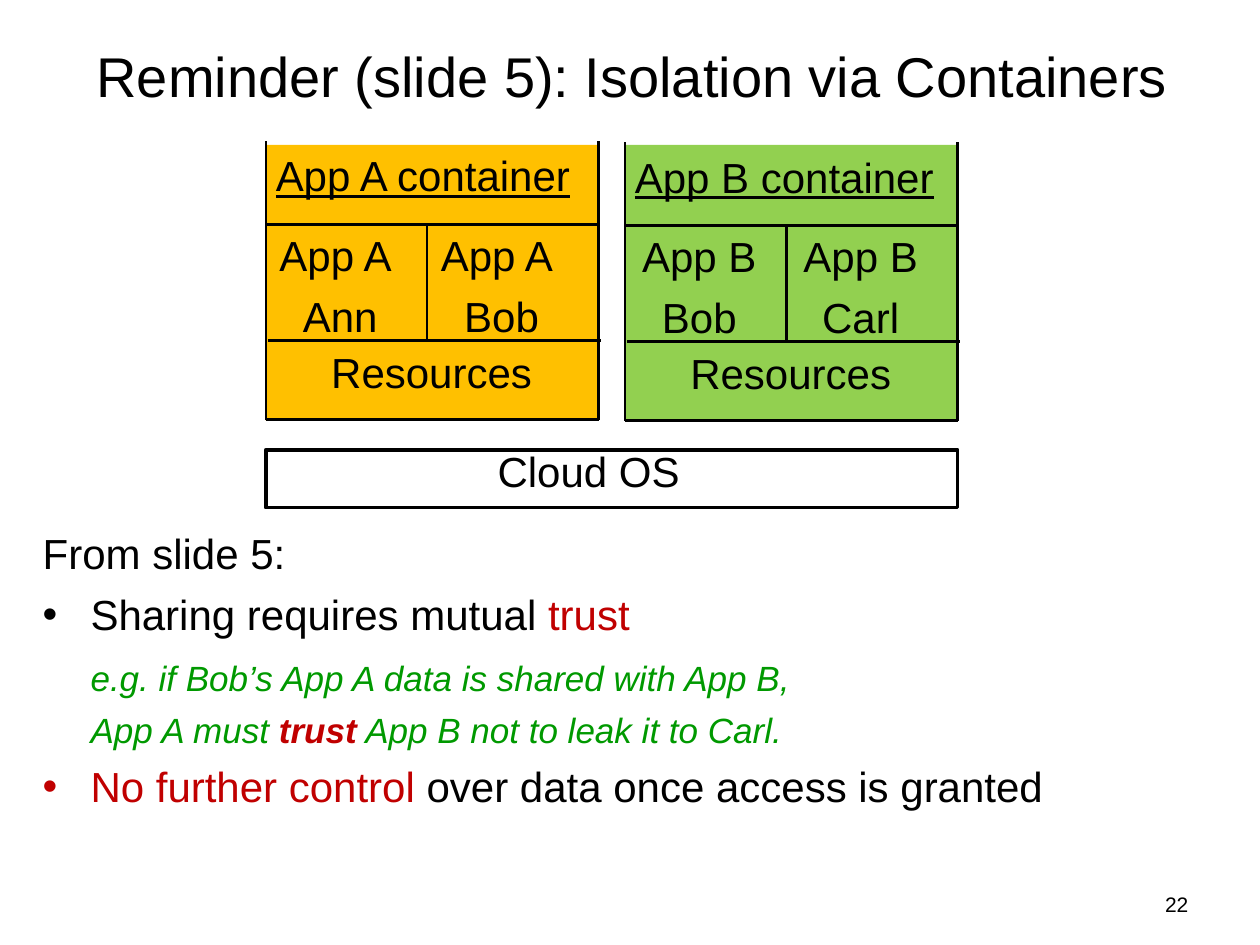
from lxml.etree import SubElement
from pptx import Presentation
from pptx.dml.color import RGBColor
from pptx.enum.shapes import MSO_CONNECTOR, MSO_SHAPE
from pptx.enum.text import MSO_ANCHOR, PP_ALIGN
from pptx.oxml.ns import qn
from pptx.util import Inches, Pt

HUES = {"ink": "000000", "amber": "FFC000", "lime": "92D050",
        "red": "C00000", "green": "009900"}
FONT = "Arial"
TITLE = "Reminder (slide 5): Isolation via Containers"
APPS = [
    ("App A", "amber", ["Ann", "Bob"], 2.11, 1.14),
    ("App B", "lime", ["Bob", "Carl"], 4.96, 1.15),
]
NOTES = [
    (24, 0, False, [("From slide 5:", "ink", "")]),
    (24, 6, True, [("Sharing requires mutual ", "ink", ""), ("trust", "red", "")]),
    (20, 10, False, [("e.g. if Bob’s App A data is shared with App B,", "green", "i")]),
    (20, 5.5, False, [("App A must ", "green", "i"), ("trust", "red", "bi"),
                      (" App B not to leak it to Carl.", "green", "i")]),
    (24, 6, True, [("No further control ", "red", ""),
                   ("over data once access is granted", "ink", "")]),
]
WIDE, HALF = 2.64, 1.28
EDGES = [
    (0, -0.02, 0, 2.19),
    (WIDE, -0.02, WIDE, 2.19),
    (0, 2.19, WIDE, 2.19),
    (0.02, 1.56, WIDE + 0.02, 1.56),
    (HALF, 0.64, HALF, 1.56),
    (0, 0.64, WIDE, 0.64),
]

deck = Presentation()
deck.slide_width, deck.slide_height = Inches(10), Inches(7.5)
slide = deck.slides.add_slide(deck.slide_layouts[6])
shapes = slide.shapes


def hue(name):
    return RGBColor.from_string(HUES[name])


def style(run, size, color="ink", marks=""):
    font = run.font
    font.name, font.size = FONT, Pt(size)
    font.color.rgb = hue(color)
    font.bold, font.italic, font.underline = ("b" in marks, "i" in marks, "u" in marks)


def frame(x, y, w, h):
    text = shapes.add_textbox(Inches(x), Inches(y), Inches(w), Inches(h)).text_frame
    text.word_wrap = True
    return text


def label(words, x, y, w, h, size=24, align=PP_ALIGN.LEFT, marks=""):
    text = frame(x, y, w, h)
    text.text = words
    for row, para in enumerate(text.paragraphs):
        para.alignment = align
        para.space_before = Pt(6 if row else 0)
        for run in para.runs:
            style(run, size, marks=marks)
    return text


def block(x, y, w, h, fill=None):
    box = shapes.add_shape(MSO_SHAPE.RECTANGLE, Inches(x), Inches(y), Inches(w), Inches(h))
    box.shadow.inherit = False
    if fill:
        box.fill.solid()
        box.fill.fore_color.rgb = hue(fill)
        box.line.fill.background()
    else:
        box.fill.background()
        box.line.color.rgb = hue("ink")
        box.line.width = Pt(2)


def rule(x1, y1, x2, y2):
    line = shapes.add_connector(MSO_CONNECTOR.STRAIGHT, Inches(x1), Inches(y1),
                                Inches(x2), Inches(y2))
    line.line.color.rgb = hue("ink")
    line.line.width = Pt(1.5)
    SubElement(line._element.spPr, qn("a:effectLst"))


def app(name, fill, users, x, y):
    block(x, 1.15, WIDE, 2.19, fill)
    label(f"{name} container", x - 0.02, y, 2.69, 0.63, marks="u")
    for col, user in enumerate(users):
        label(f"{name} \n{user}", x + col * HALF, y + 0.63, 1.18, 0.93,
              align=PP_ALIGN.CENTER)
    label("Resources", x + 0.42, y + 1.56, 1.81, 0.63)
    for x1, y1, x2, y2 in EDGES:
        rule(x + x1, y + y1, x + x2, y + y2)


def notes():
    text = frame(0.24, 4.14, 9.72, 2.74)
    for row, (size, gap, dot, parts) in enumerate(NOTES):
        para = text.add_paragraph() if row else text.paragraphs[0]
        para.space_before = Pt(gap)
        for words, color, marks in parts:
            run = para.add_run()
            run.text = words
            style(run, size, color, marks)
        props = para._p.get_or_add_pPr()
        if row:
            props.set("marL", str(Inches(0.38)))
        if dot:
            props.set("indent", str(-Inches(0.38)))
            SubElement(props, qn("a:buFont")).set("typeface", FONT)
            SubElement(props, qn("a:buChar")).set("char", "•")


title = label(TITLE, 0.52, 0.21, 9, 0.77, 32, PP_ALIGN.CENTER)
title.vertical_anchor = MSO_ANCHOR.MIDDLE
for item in APPS:
    app(*item)
block(2.11, 3.57, 5.49, 0.46)
label("Cloud OS", 3.85, 3.49, 1.81, 0.63)
notes()
label("22", 7.17, 7.03, 2.36, 0.32, 12, PP_ALIGN.RIGHT)
deck.save("out.pptx")
